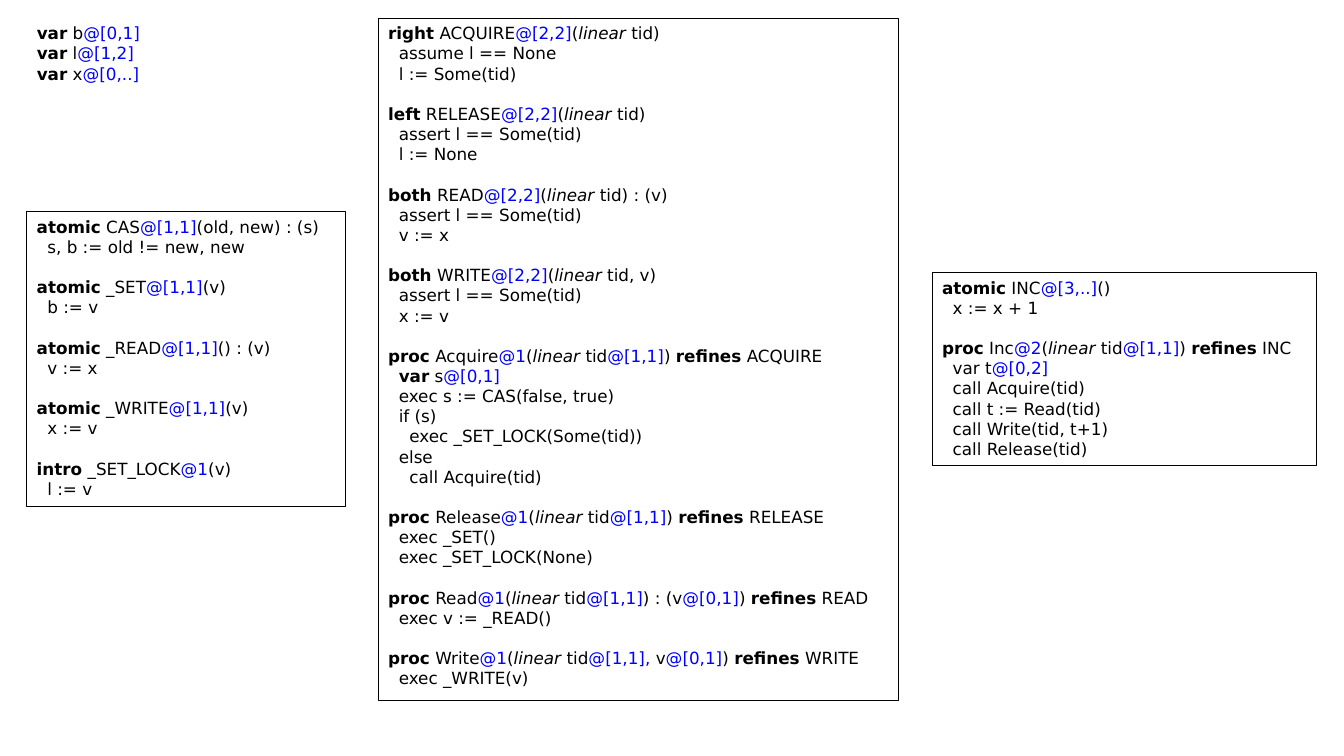
from pptx import Presentation
from pptx.dml.color import RGBColor
from pptx.enum.text import MSO_ANCHOR, MSO_AUTO_SIZE, PP_ALIGN
from pptx.util import Pt

TOP, GROW, LEFT = MSO_ANCHOR.TOP, MSO_AUTO_SIZE.SHAPE_TO_FIT_TEXT, PP_ALIGN.LEFT
BLANK_LAYOUT = 6

THEME = {
    "font": "DejaVu Sans",
    "size": Pt(12),
    "ink": RGBColor(0x00, 0x00, 0x00),
    "layer": RGBColor(0x00, 0x00, 0xFF),
    "border": Pt(0.75),
    "indent": Pt(7.6),
    "block_gap": Pt(14.4),
}

# Code markup: *keyword*, ~modifier~, `layer annotation`; two leading spaces per indent.
VARIABLES = ["""\
*var* b`@[0,1]`
*var* l`@[1,2]`
*var* x`@[0,..]`"""]

PRIMITIVES = [
    "*atomic* CAS`@[1,1]`(old, new) : (s)\n  s, b := old != new, new",
    "*atomic* _SET`@[1,1]`(v)\n  b := v",
    "*atomic* _READ`@[1,1]`() : (v)\n  v := x",
    "*atomic* _WRITE`@[1,1]`(v)\n  x := v",
    "*intro* _SET_LOCK`@1`(v)\n  l := v",
]

LOCK_LAYER = [
    "*right* ACQUIRE`@[2,2]`(~linear ~tid)\n  assume l == None\n  l := Some(tid)",
    "*left* RELEASE`@[2,2]`(~linear ~tid)\n  assert l == Some(tid)\n  l := None",
    "*both* READ`@[2,2]`(~linear ~tid) : (v)\n  assert l == Some(tid)\n  v := x",
    "*both* WRITE`@[2,2]`(~linear ~tid, v)\n  assert l == Some(tid)\n  x := v",
    """\
*proc* Acquire`@1`(~linear ~tid`@[1,1]`) *refines* ACQUIRE
  *var* s`@[0,1]`
  exec s := CAS(false, true)
  if (s)
    exec _SET_LOCK(Some(tid))
  else
    call Acquire(tid)""",
    """\
*proc* Release`@1`(~linear ~tid`@[1,1]`) *refines* RELEASE
  exec _SET()
  exec _SET_LOCK(None)""",
    """\
*proc* Read`@1`(~linear ~tid`@[1,1]`) : (v`@[0,1]`) *refines* READ
  exec v := _READ()""",
    """\
*proc* Write`@1`(~linear ~tid`@[1,1], `v`@[0,1]`) *refines* WRITE
  exec _WRITE(v)""",
]

INCREMENT = [
    "*atomic* INC`@[3,..]`()\n  x := x + 1",
    """\
*proc* Inc`@2`(~linear ~tid`@[1,1]`) *refines* INC
  var t`@[0,2]`
  call Acquire(tid)
  call t := Read(tid)
  call Write(tid, t+1)
  call Release(tid)""",
]

# (code blocks, (left, top, width, height) in points, wraps, has border)
PANELS = [
    (INCREMENT, (665.8, 194.6, 274.6, 138.2), True, True),
    (LOCK_LAYER, (270.2, 12.9, 371.9, 487.4), False, True),
    (PRIMITIVES, (19.2, 151.1, 227.8, 211), False, True),
    (VARIABLES, (19.2, 12.9, 92.2, 51.1), False, False),
]

STYLES = {
    "*": {"bold": True},
    "~": {"italic": True},
    "`": {"color": THEME["layer"]},
}


def split_styles(line):
    """Yield (text, style marker or None) for each styled stretch of a line."""
    text, active = "", None
    for character in line:
        if character in STYLES:
            if text:
                yield text, active
            text, active = "", None if active == character else character
        else:
            text += character
    if text:
        yield text, active


def add_code_line(paragraph, line, space_before):
    code = line.lstrip(" ")
    depth = (len(line) - len(code)) // 2
    paragraph.alignment = LEFT
    paragraph.space_before = space_before
    properties = paragraph._p.get_or_add_pPr()
    properties.set("marL", str(depth * THEME["indent"]))
    properties.set("indent", "0")
    for text, marker in split_styles(code):
        run = paragraph.add_run()
        run.text = text
        style = {"name": THEME["font"], "size": THEME["size"], "color": THEME["ink"],
                 **STYLES.get(marker, {})}
        run.font.color.rgb = style.pop("color")
        for name, value in style.items():
            setattr(run.font, name, value)


def add_panel(slide, blocks, box, wraps, bordered):
    panel = slide.shapes.add_textbox(*map(Pt, box))
    if bordered:
        panel.line.color.rgb = THEME["ink"]
        panel.line.width = THEME["border"]
    frame = panel.text_frame
    frame_format = {"word_wrap": wraps, "auto_size": GROW, "vertical_anchor": TOP}
    for name, value in frame_format.items():
        setattr(frame, name, value)
    lines = [(line, THEME["block_gap"] if block_number and not line_number else Pt(0))
             for block_number, block in enumerate(blocks)
             for line_number, line in enumerate(block.split("\n"))]
    for number, (line, gap) in enumerate(lines):
        paragraph = frame.add_paragraph() if number else frame.paragraphs[0]
        add_code_line(paragraph, line, gap)


def main():
    presentation = Presentation()
    presentation.slide_width, presentation.slide_height = Pt(960), Pt(540)
    slide = presentation.slides.add_slide(presentation.slide_layouts[BLANK_LAYOUT])
    for panel in PANELS:
        add_panel(slide, *panel)
    presentation.save("out.pptx")


if __name__ == "__main__":
    main()
